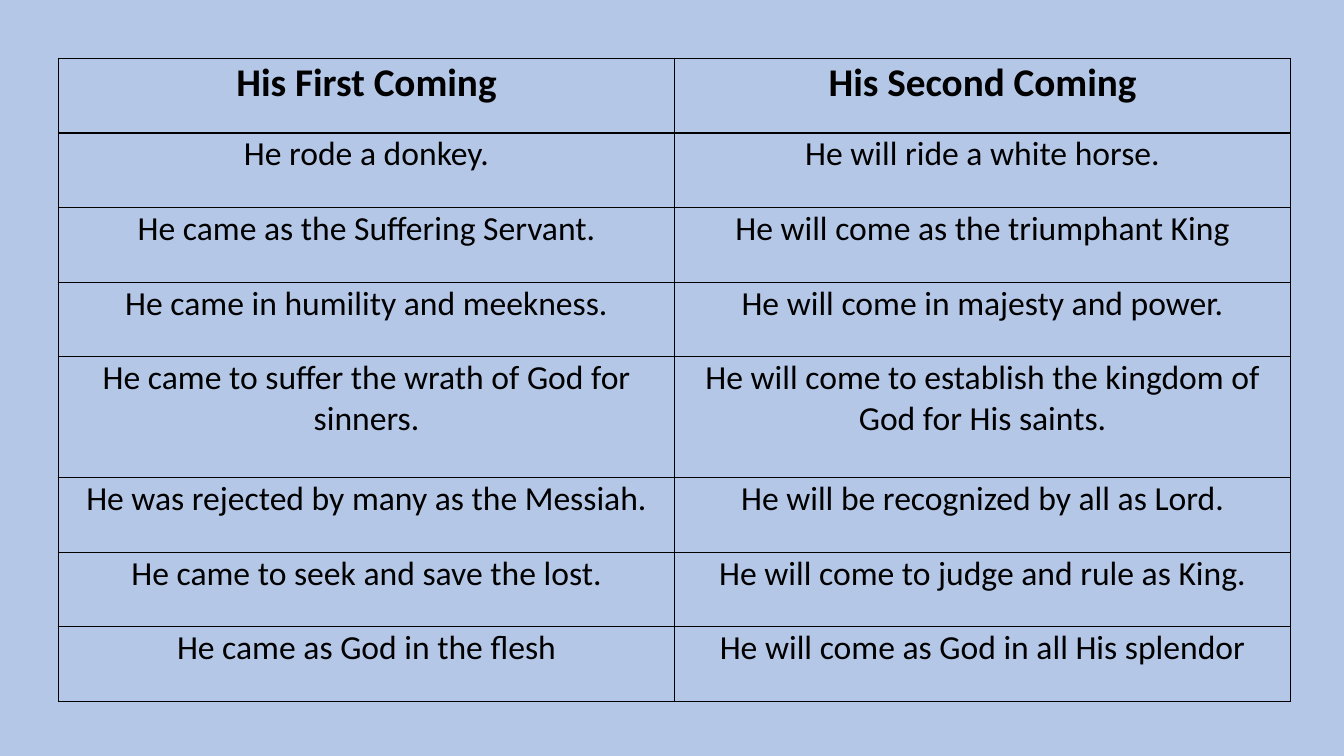
"""Build a slide that contrasts the first and second coming in a table."""
from dataclasses import dataclass

from lxml.etree import fromstring
from pptx import Presentation
from pptx.dml.color import RGBColor
from pptx.enum.text import MSO_ANCHOR as Anchor, PP_ALIGN as Align
from pptx.oxml.ns import nsdecls
from pptx.slide import Slide
from pptx.table import _Cell as Cell
from pptx.util import Inches, Pt


@dataclass(frozen=True)
class Theme:
    background: str = "B4C7E7"
    ink: str = "000000"
    font: str = "Calibri"
    heading_size: int = 28
    body_size: int = 24
    border_width: int = 1


@dataclass(frozen=True)
class Contrast:
    first: str
    second: str
    height: float = 0.74
    heading: bool = False


THEME = Theme()
LEFT, TOP, COLUMN_WIDTH = 0.58, 0.58, 6.11
CONTRASTS = [
    Contrast("His First Coming", "His Second Coming", heading=True),
    Contrast("He rode a donkey.", "He will ride a white horse."),
    Contrast("He came as the Suffering Servant.", "He will come as the triumphant King"),
    Contrast("He came in humility and meekness.", "He will come in majesty and power."),
    Contrast(
        "He came to suffer the wrath of God for sinners.",
        "He will come to establish the kingdom of God for His saints.",
        height=1.2,
    ),
    Contrast("He was rejected by many as the Messiah.", "He will be recognized by all as Lord."),
    Contrast("He came to seek and save the lost.", "He will come to judge and rule as King."),
    Contrast("He came as God in the flesh", "He will come as God in all His splendor"),
]


def draw_borders(cell: Cell) -> None:
    """Outline the four sides of a cell."""
    properties = cell._tc.get_or_add_tcPr()
    for position, side in enumerate("LRTB"):
        border = fromstring(
            f'<a:ln{side} {nsdecls("a")} w="{Pt(THEME.border_width)}"><a:solidFill>'
            f'<a:srgbClr val="{THEME.ink}"/></a:solidFill></a:ln{side}>'
        )
        properties.insert(position, border)


def fill_cell(cell: Cell, text: str, heading: bool) -> None:
    """Write centred text into a transparent, bordered cell."""
    cell.fill.background()
    draw_borders(cell)
    cell.margin_left = cell.margin_right = Inches(0.05)
    cell.margin_top = cell.margin_bottom = Inches(0.01)
    cell.vertical_anchor = Anchor.TOP
    cell.text_frame.text = text
    para = cell.text_frame.paragraphs[0]
    para.alignment = Align.CENTER
    font = para.runs[0].font
    font.name = THEME.font
    font.size = Pt(THEME.heading_size if heading else THEME.body_size)
    font.bold = heading
    font.color.rgb = RGBColor.from_string(THEME.ink)


def draw_table(page: Slide, contrasts: list[Contrast]) -> None:
    """Lay out one table row per contrast."""
    height = sum(contrast.height for contrast in contrasts)
    table = page.shapes.add_table(
        len(contrasts), 2, Inches(LEFT), Inches(TOP), Inches(2 * COLUMN_WIDTH), Inches(height)
    ).table
    table.horz_banding = False
    table.first_row = False
    for column in table.columns:
        column.width = Inches(COLUMN_WIDTH)
    for row, contrast in zip(table.rows, contrasts):
        row.height = Inches(contrast.height)
        for cell, text in zip(row.cells, (contrast.first, contrast.second)):
            fill_cell(cell, text, contrast.heading)


def main() -> None:
    """Create the deck and save it."""
    deck = Presentation()
    deck.slide_width, deck.slide_height = Inches(13.33), Inches(7.5)
    page = deck.slides.add_slide(deck.slide_layouts[6])
    page.background.fill.solid()
    page.background.fill.fore_color.rgb = RGBColor.from_string(THEME.background)
    draw_table(page, CONTRASTS)
    deck.save("out.pptx")


if __name__ == "__main__":
    main()
